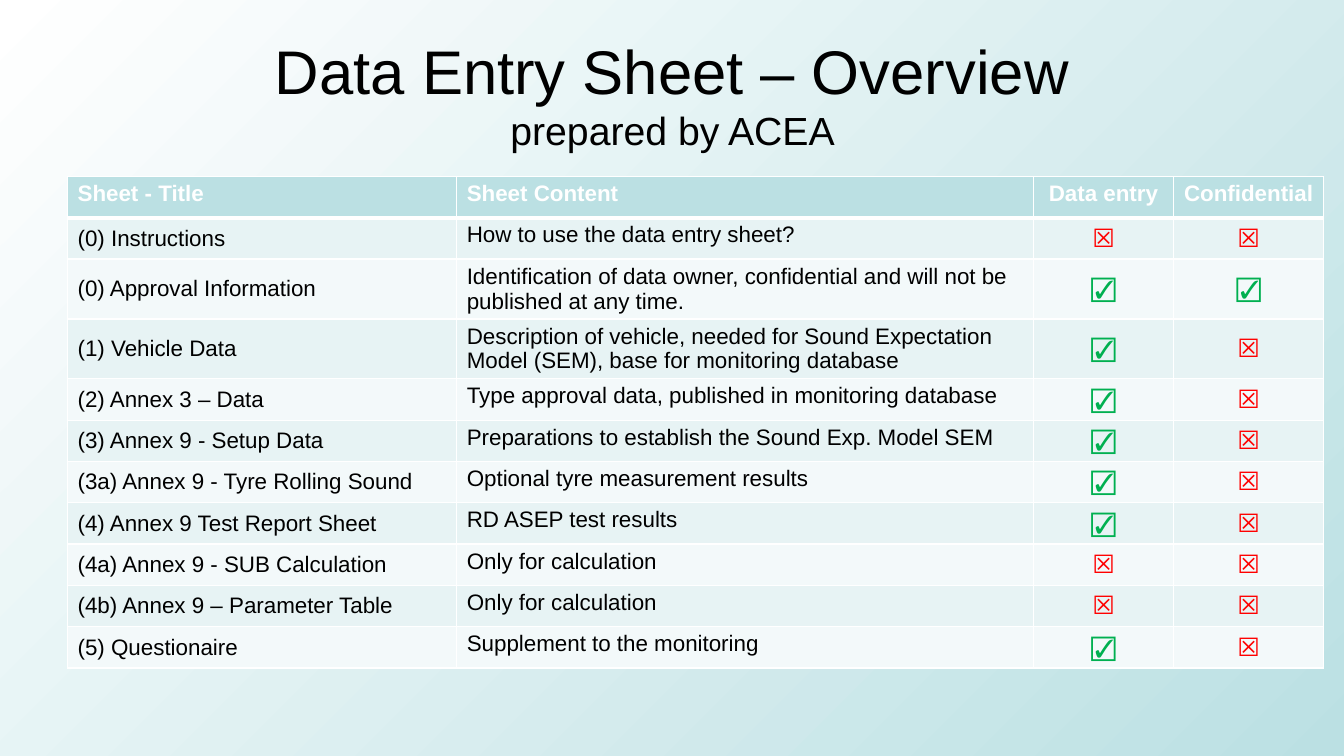
"""Build the data entry sheet overview slide."""
from typing import NamedTuple

from lxml.etree import SubElement
from pptx import Presentation
from pptx.dml.color import RGBColor
from pptx.enum.text import MSO_ANCHOR, MSO_AUTO_SIZE, PP_ALIGN
from pptx.oxml.ns import qn
from pptx.util import Inches, Pt

HUES = {
    "white": "FFFFFF", "teal": "BBE0E3", "odd": "E7F3F4", "even": "F3F9FA",
    "black": "000000", "red": "FF0000", "green": "00B050",
}
WIDTHS = (3.86, 5.72, 1.39, 1.49)
HEADS = ("Sheet - Title", "Sheet Content", "Data entry", "Confidential")


class Sheet(NamedTuple):
    """One sheet of the workbook."""
    title: str
    content: str
    entry: bool
    secret: bool


class Style(NamedTuple):
    """Look of a run of text."""
    size: int
    hue: str
    bold: bool = False


SHEETS = (
    Sheet("(0) Instructions", "How to use the data entry sheet?", False, False),
    Sheet("(0) Approval Information",
          "Identification of data owner, confidential and will not be published at any time.",
          True, True),
    Sheet("(1) Vehicle Data",
          "Description of vehicle, needed for Sound Expectation Model (SEM), "
          "base for monitoring database", True, False),
    Sheet("(2) Annex 3 – Data", "Type approval data, published in monitoring database",
          True, False),
    Sheet("(3) Annex 9 - Setup Data", "Preparations to establish the Sound Exp. Model SEM",
          True, False),
    Sheet("(3a) Annex 9 - Tyre Rolling Sound", "Optional tyre measurement results", True, False),
    Sheet("(4) Annex 9 Test Report Sheet", "RD ASEP test results", True, False),
    Sheet("(4a) Annex 9 - SUB Calculation", "Only for calculation", False, False),
    Sheet("(4b) Annex 9 – Parameter Table", "Only for calculation", False, False),
    Sheet("(5) Questionaire", "Supplement to the monitoring", True, False),
)
HEAD = Style(16, "white", True)
BODY = Style(16, "black")
YES = Style(18, "green", True)
NO = Style(18, "red", True)


def shade(hue: str) -> RGBColor:
    """Return a named colour."""
    return RGBColor.from_string(HUES[hue])


def write(para, text: str, style: Style) -> None:
    """Add one styled run."""
    run = para.add_run()
    run.text = text
    font = run.font
    font.name, font.size, font.bold = "Arial", Pt(style.size), style.bold
    font.color.rgb = shade(style.hue)


def frame(cell, top: int, base: int) -> None:
    """Give a cell white borders."""
    props = cell._tc.get_or_add_tcPr()
    for side, width in (("L", 1), ("R", 1), ("T", top), ("B", base)):
        line = SubElement(props, qn(f"a:ln{side}"), w=str(Pt(width)))
        fill = SubElement(line, qn("a:solidFill"))
        SubElement(fill, qn("a:srgbClr"), val=HUES["white"])


def fill_cell(cell, row: int, col: int, text: str, style: Style) -> None:
    """Format one table cell and write its text."""
    frame(cell, 3 if row == 1 else 1, 3 if row == 0 else 1)
    cell.fill.solid()
    cell.fill.fore_color.rgb = shade("teal" if row == 0 else "odd" if row % 2 else "even")
    if row and col != 1:
        cell.vertical_anchor = MSO_ANCHOR.MIDDLE
    para = cell.text_frame.paragraphs[0]
    para.alignment = PP_ALIGN.CENTER if col > 1 else PP_ALIGN.LEFT
    write(para, text, style)


def mark(flag: bool) -> tuple[str, Style]:
    """Return the tick or cross for a flag."""
    return ("☑", YES) if flag else ("☒", NO)


def add_title(slide) -> None:
    """Place the two-line title."""
    title = slide.shapes.title
    title.left, title.top = Inches(0.67), Inches(0.3)
    title.width, title.height = Inches(12), Inches(1.25)
    text = title.text_frame
    text.word_wrap = True
    text.auto_size = MSO_AUTO_SIZE.NONE
    text.vertical_anchor = MSO_ANCHOR.MIDDLE
    para = text.paragraphs[0]
    para.alignment = PP_ALIGN.CENTER
    write(para, "Data Entry Sheet – Overview", Style(44, "black"))
    para.add_line_break()
    write(para, "prepared by ACEA", Style(28, "black"))


def add_grid(slide) -> None:
    """Place the table of sheets."""
    rows = [[(head, HEAD) for head in HEADS]]
    rows += [[(sheet.title, BODY), (sheet.content, BODY), mark(sheet.entry), mark(sheet.secret)]
             for sheet in SHEETS]
    high = Inches(0.41)
    table = slide.shapes.add_table(
        len(rows), len(WIDTHS), Inches(0.67), Inches(1.75),
        Inches(sum(WIDTHS)), high * len(rows)).table
    for column, width in zip(table.columns, WIDTHS):
        column.width = Inches(width)
    for row, items in enumerate(rows):
        table.rows[row].height = high
        for col, (text, style) in enumerate(items):
            fill_cell(table.cell(row, col), row, col, text, style)


def main() -> None:
    """Build and save the deck."""
    deck = Presentation()
    deck.slide_width, deck.slide_height = Inches(13.33), Inches(7.5)
    slide = deck.slides.add_slide(deck.slide_layouts[5])
    back = slide.background.fill
    back.gradient()
    back.gradient_angle = 315
    for stop, hue in zip(back.gradient_stops, ("white", "teal")):
        stop.color.rgb = shade(hue)
    add_title(slide)
    add_grid(slide)
    deck.save("out.pptx")


if __name__ == "__main__":
    main()
